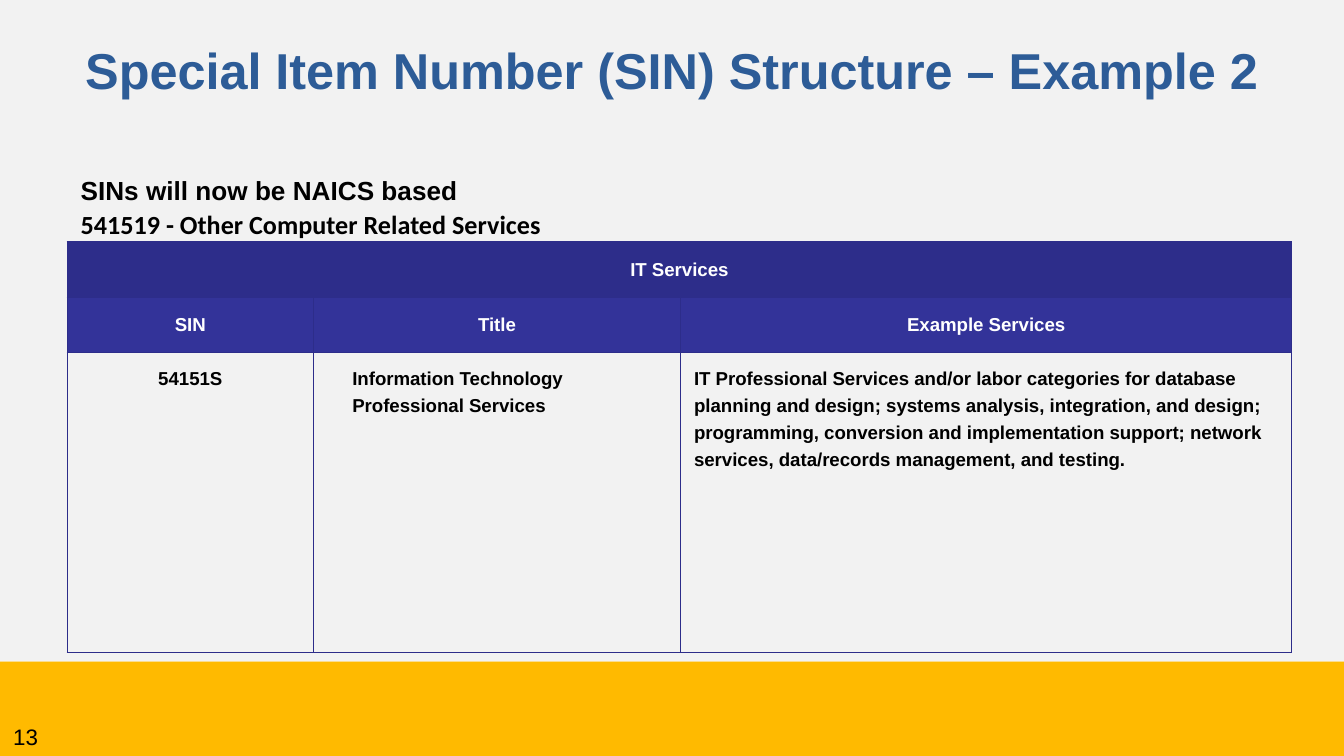
from pptx import Presentation
from pptx.dml.color import RGBColor
from pptx.enum import shapes, text
from pptx.oxml import ns, xmlchemy
from pptx.util import Pt

WIDTH, HEIGHT, BAND_TOP = 720, 405, 354.4
NAVY, INDIGO, WHITE, BLACK = "2D2D8A", "333399", "FFFFFF", "000000"
CENTER = text.PP_ALIGN.CENTER
MIDDLE, TOP = text.MSO_ANCHOR.MIDDLE, text.MSO_ANCHOR.TOP


def color(value):
    return RGBColor.from_string(value)


def add_element(parent, tag, **attributes):
    element = xmlchemy.OxmlElement(tag)
    for name, value in attributes.items():
        element.set(name, str(value))
    parent.append(element)
    return element


def write(para, words, size=10, ink=BLACK, bold=True, font="Arial",
          align=text.PP_ALIGN.LEFT, spacing=1.0, indent=0):
    """Fill one paragraph with formatted text."""
    properties = para._p.get_or_add_pPr()
    properties.set("marL", str(Pt(indent)))
    properties.set("indent", "0")
    add_element(properties, "a:buNone")
    para.alignment = align
    para.line_spacing = spacing
    para.space_before = para.space_after = Pt(0)
    span = para.add_run()
    span.text = words
    span.font.name = font
    span.font.size = Pt(size)
    span.font.bold = bold
    span.font.color.rgb = color(ink)


def place(shape, box):
    shape.left, shape.top, shape.width, shape.height = map(Pt, box)


def prepare_frame(frame, anchor=TOP):
    frame.word_wrap = True
    frame.auto_size = text.MSO_AUTO_SIZE.NONE
    frame.vertical_anchor = anchor
    frame.margin_left = frame.margin_right = Pt(7.2)
    frame.margin_top = frame.margin_bottom = Pt(3.6)


def add_backdrop(page, box, fill):
    band = page.shapes.add_shape(shapes.MSO_SHAPE.RECTANGLE, *map(Pt, box))
    band.shadow.inherit = False
    band.fill.solid()
    band.fill.fore_color.rgb = color(fill)
    band.line.fill.background()
    # Keep the backdrop behind the placeholders
    page.shapes._spTree.insert(2, band._element)


def fill_title(page, box):
    title = page.shapes.title
    place(title, box)
    prepare_frame(title.text_frame)
    write(title.text_frame.paragraphs[0],
          "Special Item Number (SIN) Structure – Example 2",
          size=27, ink="2D5C97", align=CENTER, spacing=0.9)


def fill_intro(page, box):
    body = page.placeholders[1]
    place(body, box)
    frame = body.text_frame
    prepare_frame(frame)
    write(frame.paragraphs[0], "SINs will now be NAICS based",
          size=14, spacing=1.5)
    write(frame.add_paragraph(), "541519 - Other Computer Related Services",
          size=14, font="Calibri", spacing=1.07)


def style_cell(cell, fill=None, anchor=TOP):
    cell.margin_left = cell.margin_right = Pt(7.2)
    cell.margin_top = cell.margin_bottom = Pt(5)
    cell.vertical_anchor = anchor
    properties = cell._tc.get_or_add_tcPr()
    for side in "LRTB":
        line = add_element(properties, f"a:ln{side}", w=Pt(0.75))
        solid = add_element(line, "a:solidFill")
        add_element(solid, "a:srgbClr", val=NAVY)
    if fill:
        cell.fill.solid()
        cell.fill.fore_color.rgb = color(fill)
    else:
        cell.fill.background()


def add_services_table(page, box):
    left, top, width, height = box
    rows = [
        ["IT Services", "", ""],
        ["SIN", "Title", "Example Services"],
        ["54151S", "Information Technology Professional Services",
         "IT Professional Services and/or labor categories for database "
         "planning and design; systems analysis, integration, and design; "
         "programming, conversion and implementation support; network "
         "services, data/records management, and testing."],
    ]
    table = page.shapes.add_table(3, 3, *map(Pt, box)).table
    table.first_row = table.horz_banding = False
    header = 29.7
    for row, size in zip(table.rows, (header, header, height - 2 * header)):
        row.height = Pt(size)
    for column, share in zip(table.columns, (0.201, 0.3, 0.499)):
        column.width = Pt(width * share)

    # Two header rows above one row of details
    for r, words in enumerate(rows):
        for c, entry in enumerate(words):
            cell = table.cell(r, c)
            para = cell.text_frame.paragraphs[0]
            if r < 2:
                style_cell(cell, (NAVY, INDIGO)[r], MIDDLE)
                look = dict(ink=WHITE, align=CENTER)
            else:
                style_cell(cell)
                look = dict(spacing=1.3, indent=13.7 if c == 1 else 0)
                if c == 0:
                    look["align"] = CENTER
            if entry:
                write(para, entry, **look)
    table.cell(0, 0).merge(table.cell(0, 2))


def add_page_number(page, box):
    number = page.shapes.add_textbox(*map(Pt, box))
    prepare_frame(number.text_frame, MIDDLE)
    write(number.text_frame.paragraphs[0], "13", size=12, bold=False)


def main():
    deck = Presentation()
    deck.slide_width, deck.slide_height = Pt(WIDTH), Pt(HEIGHT)
    page = deck.slides.add_slide(deck.slide_layouts[1])
    add_backdrop(page, (0, 0, WIDTH, BAND_TOP), "F2F2F2")
    add_backdrop(page, (0, BAND_TOP, WIDTH, HEIGHT - BAND_TOP), "FFBA00")
    fill_title(page, (0, 21, WIDTH, 24.5))
    fill_intro(page, (36, 81.4, 656, 72))
    add_services_table(page, (36, 129.6, 656, 220.2))
    add_page_number(page, (0, 383.8, 168, 21.2))
    deck.save("out.pptx")


if __name__ == "__main__":
    main()
